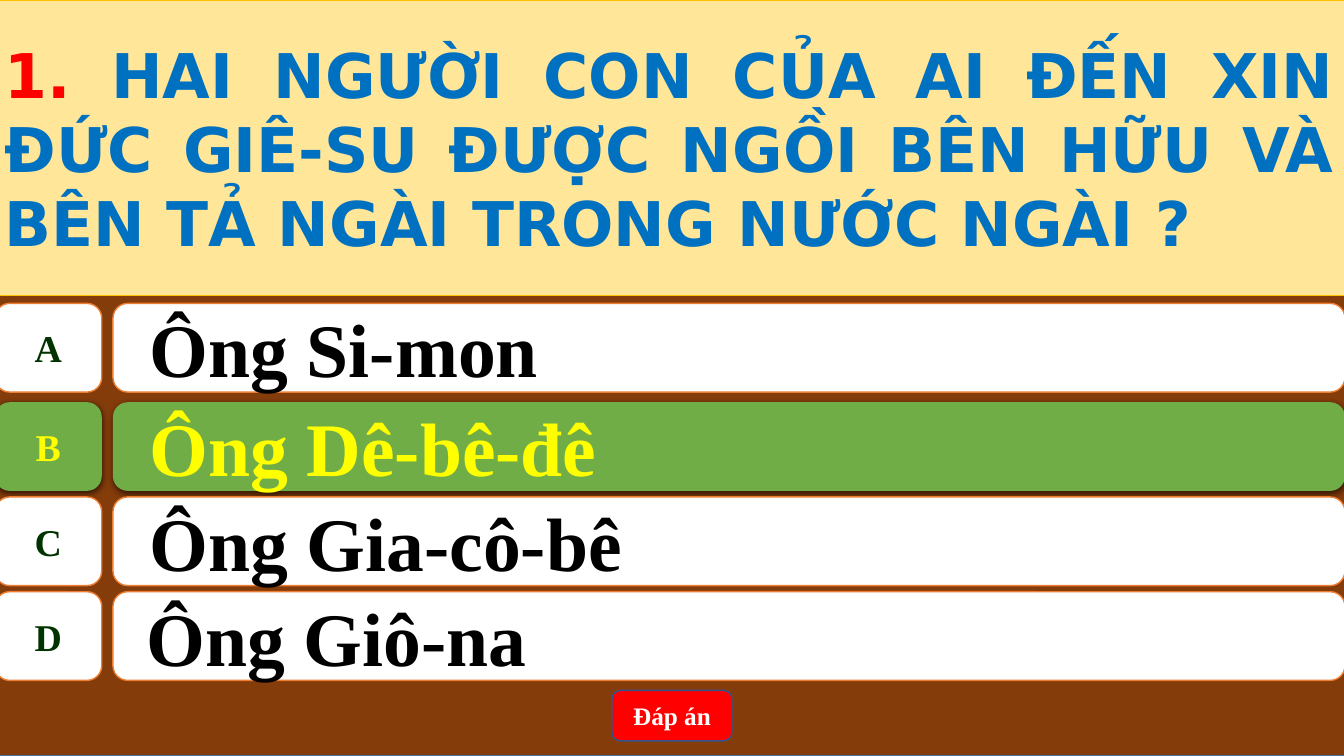
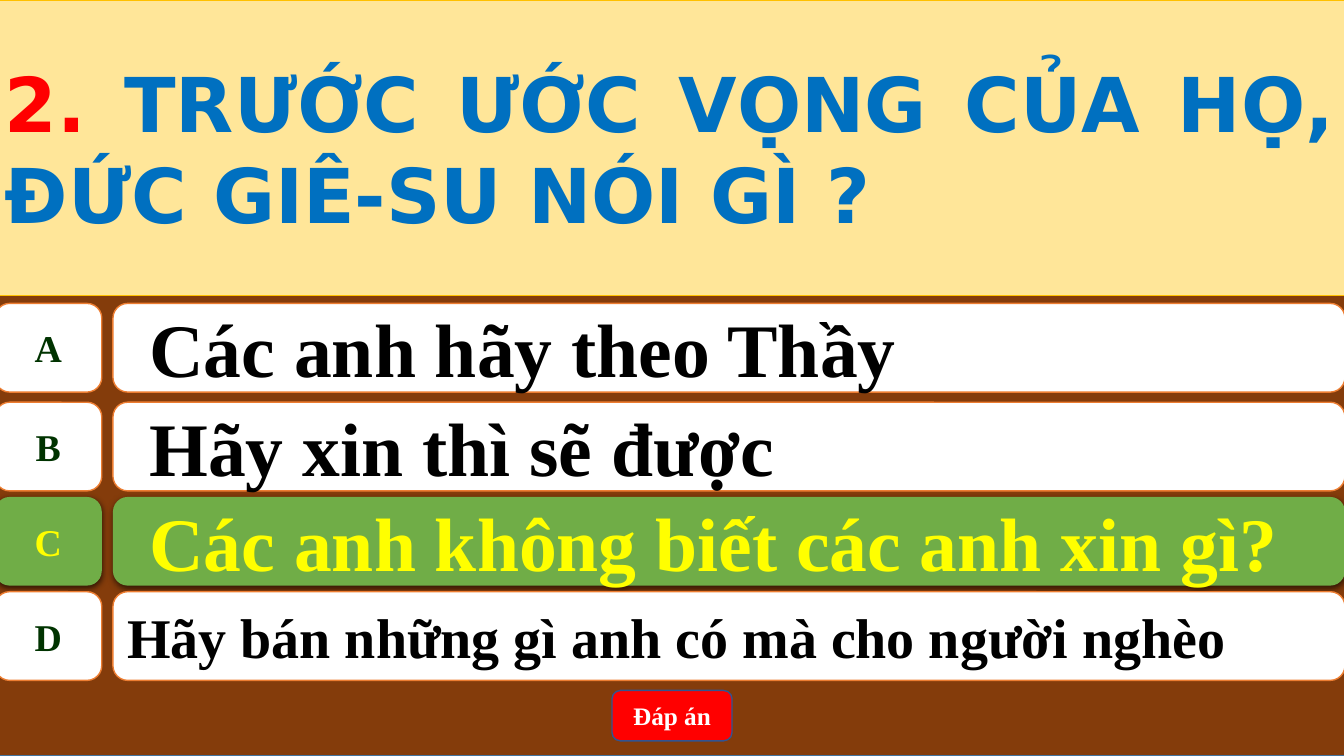
from lxml import etree
from pptx import Presentation
from pptx.dml.color import RGBColor
from pptx.enum.shapes import MSO_SHAPE
from pptx.enum.text import MSO_ANCHOR, PP_ALIGN
from pptx.oxml.ns import qn
from pptx.util import Inches, Pt

RECT = MSO_SHAPE.RECTANGLE
ROUNDED = MSO_SHAPE.ROUNDED_RECTANGLE
LETTER_BOX = MSO_SHAPE.FLOWCHART_ALTERNATE_PROCESS
MIDDLE = MSO_ANCHOR.MIDDLE
LEFT, CENTER, JUSTIFY = PP_ALIGN.LEFT, PP_ALIGN.CENTER, PP_ALIGN.JUSTIFY

WHITE = RGBColor(0xFF, 0xFF, 0xFF)
BLACK = RGBColor(0x00, 0x00, 0x00)
BROWN = RGBColor(0x84, 0x3C, 0x0B)
STEEL = RGBColor(0x43, 0x73, 0x9E)
NAVY = RGBColor(0x32, 0x54, 0x91)
CREAM = RGBColor(0xFF, 0xE6, 0x99)
GOLD = RGBColor(0xFF, 0xC0, 0x00)
ORANGE = RGBColor(0xED, 0x7D, 0x31)
RED = RGBColor(0xFF, 0x00, 0x00)
BLUE = RGBColor(0x00, 0x70, 0xC0)
GREEN = RGBColor(0x70, 0xAD, 0x47)
YELLOW = RGBColor(0xFF, 0xFF, 0x00)
DARK_GREEN = RGBColor(0x00, 0x33, 0x00)

SERIF, SANS = "Times New Roman", "DejaVu Sans"
SLIDE_W, SLIDE_H = 13.33, 7.5
FRAME_LEFT, FRAME_W = -0.05, 13.39
QUESTION_H = 2.93
ROW_TOPS = (3.01, 3.99, 4.93, 5.87)
ROW_H = 0.88
LETTER_W, LETTER_GAP = 1.06, 0.11
BUTTON_BOX = (6.07, 6.85, 1.19, 0.5)
HANGING = (0.5, -0.28)

QUIZ = (
    {
        "number": "1. ",
        "question": "HAI NGƯỜI CON CỦA AI ĐẾN XIN ĐỨC GIÊ-SU ĐƯỢC NGỒI BÊN HỮU VÀ "
                    "BÊN TẢ NGÀI TRONG NƯỚC NGÀI ?",
        "size": 44,
        "correct": "B",
        "answers": (
            ("Ông Si-mon", 54, HANGING),
            ("Ông Dê-bê-đê", 54, HANGING),
            ("Ông Gia-cô-bê", 54, HANGING),
            ("Ông Giô-na", 54, (0.19, 0)),
        ),
    },
    {
        "number": "2. ",
        "question": "TRƯỚC ƯỚC VỌNG CỦA HỌ, ĐỨC GIÊ-SU NÓI GÌ ?",
        "size": 54,
        "correct": "C",
        "answers": (
            ("Các anh hãy theo Thầy", 54, HANGING),
            ("Hãy xin thì sẽ được", 54, HANGING),
            ("Các anh không biết các anh xin gì?", 54, HANGING),
            ("Hãy bán những gì anh có mà cho người nghèo", 40, (0, 0)),
        ),
    },
)


def add_panel(shapes, kind, box, fill, line=None, line_width=1):
    """Add a filled shape without shadow, outlined if a line colour is given."""
    panel = shapes.add_shape(kind, *(Inches(length) for length in box))
    panel.shadow.inherit = False
    panel.fill.solid()
    panel.fill.fore_color.rgb = fill
    if line is None:
        panel.line.fill.background()
    else:
        panel.line.color.rgb = line
        panel.line.width = Pt(line_width)
    return panel


def write(panel, runs, size, font, align, indent=(0, 0), wrap=True):
    """Write one bold, vertically centred paragraph of (text, colour) runs."""
    frame = panel.text_frame
    frame.word_wrap = wrap
    frame.vertical_anchor = MIDDLE
    paragraph = frame.paragraphs[0]
    paragraph.alignment = align
    properties = paragraph._p.get_or_add_pPr()
    for name, length in zip(("marL", "indent"), indent):
        properties.set(name, str(Inches(length)))
    for text, color in runs:
        run = paragraph.add_run()
        run.text = text
        run.font.name = font
        run.font.size = Pt(size)
        run.font.bold = True
        run.font.color.rgb = color


def add_shadow(panel):
    """Cast a soft black shadow straight down."""
    effects = panel._element.spPr.find(qn("a:effectLst"))
    shadow = etree.SubElement(effects, qn("a:outerShdw"), blurRad=str(Pt(4.5)),
                              dist=str(Pt(1.5)), dir="5400000", algn="ctr", rotWithShape="0")
    color = etree.SubElement(shadow, qn("a:srgbClr"), val=str(BLACK))
    etree.SubElement(color, qn("a:alpha"), val="63000")


def add_question(slide, box, number, question, size):
    """Place the question band with its red number."""
    band = add_panel(slide.shapes, RECT, box, CREAM, GOLD, 0.5)
    write(band, ((number, RED), (question, BLUE)), size, SANS, JUSTIFY)


def add_answer(slide, box, letter, answer, correct):
    """Place one row of letter and answer, highlighted when correct."""
    left, top, width, height = box
    text, size, indent = answer
    fill, line = (GREEN, None) if correct else (WHITE, ORANGE)
    answer_left = left + LETTER_W + LETTER_GAP
    row = slide.shapes.add_group_shape().shapes
    letter_box = add_panel(row, LETTER_BOX, (left, top, LETTER_W, height), fill, line)
    answer_box = add_panel(row, ROUNDED, (answer_left, top, left + width - answer_left, height),
                           fill, line)
    write(letter_box, ((letter, YELLOW if correct else DARK_GREEN),), 27, SERIF, CENTER, wrap=False)
    write(answer_box, ((text, YELLOW if correct else BLACK),), size, SERIF, LEFT, indent)
    if correct:
        add_shadow(letter_box)
        add_shadow(answer_box)


def add_button(slide, box):
    """Place the red answer button."""
    button = add_panel(slide.shapes, ROUNDED, box, RED, NAVY)
    write(button, (("Đáp án", WHITE),), 18, SERIF, CENTER)


def build_quiz_slide(deck, quiz):
    """Build one question slide with four answers."""
    slide = deck.slides.add_slide(deck.slide_layouts[6])
    add_panel(slide.shapes, RECT, (FRAME_LEFT, 0, FRAME_W, SLIDE_H), BROWN, STEEL)
    add_question(slide, (FRAME_LEFT, 0, FRAME_W, QUESTION_H),
                 quiz["number"], quiz["question"], quiz["size"])
    for letter, top, answer in zip("ABCD", ROW_TOPS, quiz["answers"]):
        add_answer(slide, (FRAME_LEFT, top, FRAME_W, ROW_H), letter, answer,
                   letter == quiz["correct"])
    add_button(slide, BUTTON_BOX)


def main():
    """Build and save the quiz."""
    deck = Presentation()
    deck.slide_width, deck.slide_height = Inches(SLIDE_W), Inches(SLIDE_H)
    for quiz in QUIZ:
        build_quiz_slide(deck, quiz)
    deck.save("out.pptx")


if __name__ == "__main__":
    main()
